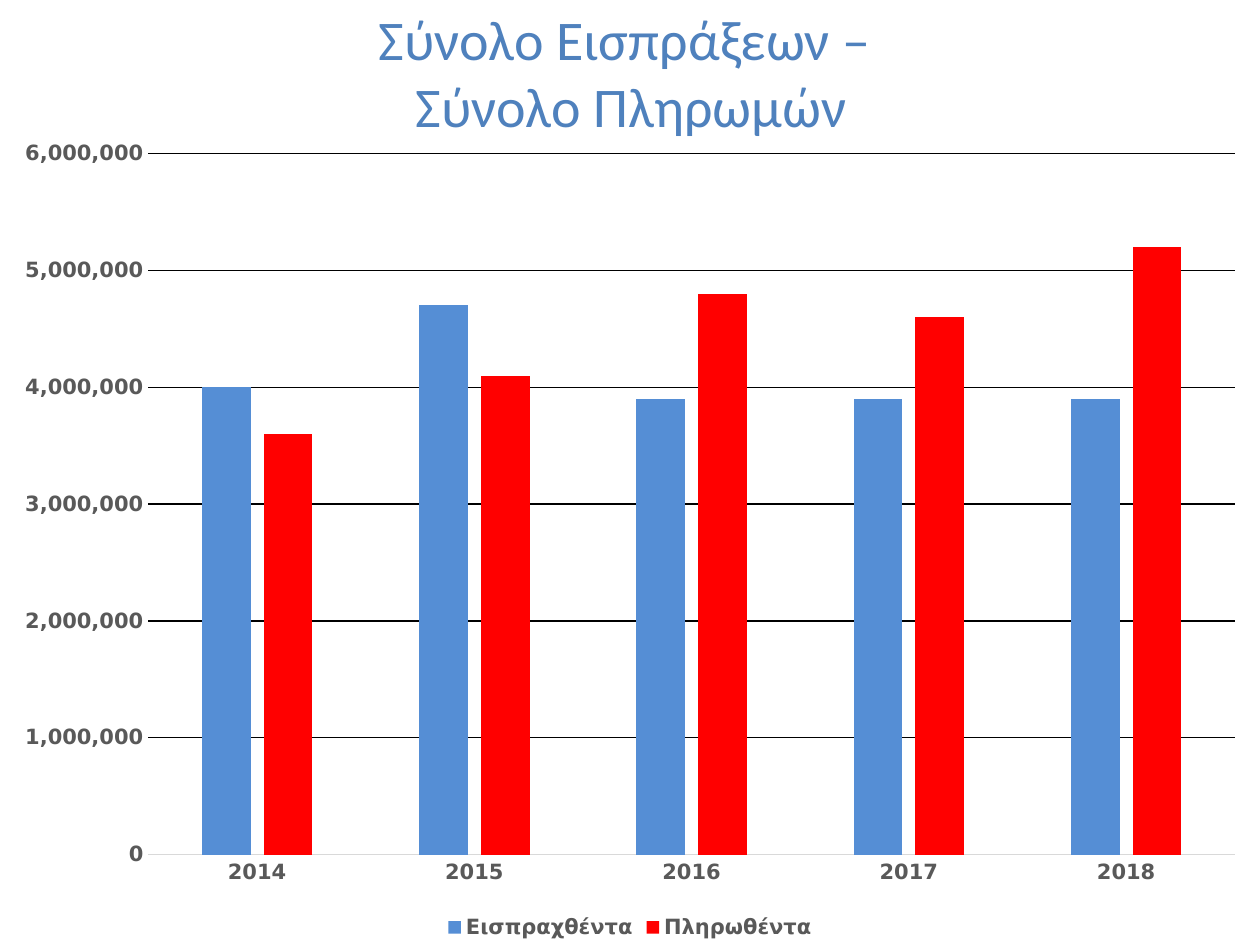
import pptx
import pptx.chart.data
import pptx.dml.color
import pptx.enum.chart
import pptx.enum.text
import pptx.util

Inches = pptx.util.Inches
Pt = pptx.util.Pt

TITLE = "Σύνολο Εισπράξεων – \vΣύνολο Πληρωμών"
YEARS = ["2014", "2015", "2016", "2017", "2018"]
SERIES = [
    ("Εισπραχθέντα", "558ED5", [4000000, 4700000, 3900000, 3900000, 3900000]),
    ("Πληρωθέντα", "FF0000", [3600000, 4100000, 4800000, 4600000, 5200000]),
]


def rgb(color):
    return pptx.dml.color.RGBColor.from_string(color)


def style_font(font, name, size, color, bold=False):
    font.name = name
    font.size = Pt(size)
    font.bold = bold
    font.color.rgb = rgb(color)


def style_line(line, color):
    line.color.rgb = rgb(color)
    line.width = Pt(0.75)


def place_title(s, left, top, width, height):
    sp = s.shapes.title
    sp.left, sp.top, sp.width, sp.height = left, top, width, height
    tf = sp.text_frame
    tf.text = TITLE
    tf.auto_size = pptx.enum.text.MSO_AUTO_SIZE.NONE
    tf.vertical_anchor = pptx.enum.text.MSO_ANCHOR.BOTTOM
    p = tf.paragraphs[0]
    p.alignment = pptx.enum.text.PP_ALIGN.CENTER
    for r in p.runs:
        style_font(r.font, "Calibri", 32, "4F81BD")


def style_axes(chart):
    for axis in (chart.category_axis, chart.value_axis):
        axis.major_tick_mark = pptx.enum.chart.XL_TICK_MARK.NONE
        axis.minor_tick_mark = pptx.enum.chart.XL_TICK_MARK.NONE
        style_font(axis.tick_labels.font, "DejaVu Sans", 12, "595959", True)
    style_line(chart.category_axis.format.line, "D9D9D9")

    axis = chart.value_axis
    axis.minimum_scale, axis.maximum_scale = 0, 6000000
    axis.major_unit = 1000000
    axis.tick_labels.number_format = "#,##0"
    axis.tick_labels.number_format_is_linked = False
    axis.format.line.fill.background()
    axis.has_major_gridlines = True
    style_line(axis.major_gridlines.format.line, "000000")


def place_chart(s, left, top, width, height):
    data = pptx.chart.data.CategoryChartData(number_format="#,##0")
    data.categories = YEARS
    for name, _, values in SERIES:
        data.add_series(name, values)
    chart = s.shapes.add_chart(
        pptx.enum.chart.XL_CHART_TYPE.COLUMN_CLUSTERED,
        left, top, width, height, data).chart
    chart.has_title = False
    style_font(chart.font, "Calibri", 10, "000000")
    style_axes(chart)

    plot = chart.plots[0]
    plot.vary_by_categories = False
    plot.gap_width = 219
    plot.overlap = -27
    for series, (_, color, _) in zip(plot.series, SERIES):
        series.format.fill.solid()
        series.format.fill.fore_color.rgb = rgb(color)

    chart.has_legend = True
    chart.legend.position = pptx.enum.chart.XL_LEGEND_POSITION.BOTTOM
    chart.legend.include_in_layout = False
    style_font(chart.legend.font, "DejaVu Sans", 12, "595959", True)


def main():
    prs = pptx.Presentation()
    prs.slide_width, prs.slide_height = Inches(10), Inches(7.5)
    s = prs.slides.add_slide(prs.slide_layouts.get_by_name("Title Only"))
    place_title(s, Inches(0.51), Inches(0.44), Inches(9), Inches(0.71))
    place_chart(s, Inches(0), Inches(0.99), Inches(10), Inches(6.51))
    prs.save("out.pptx")


if __name__ == "__main__":
    main()
